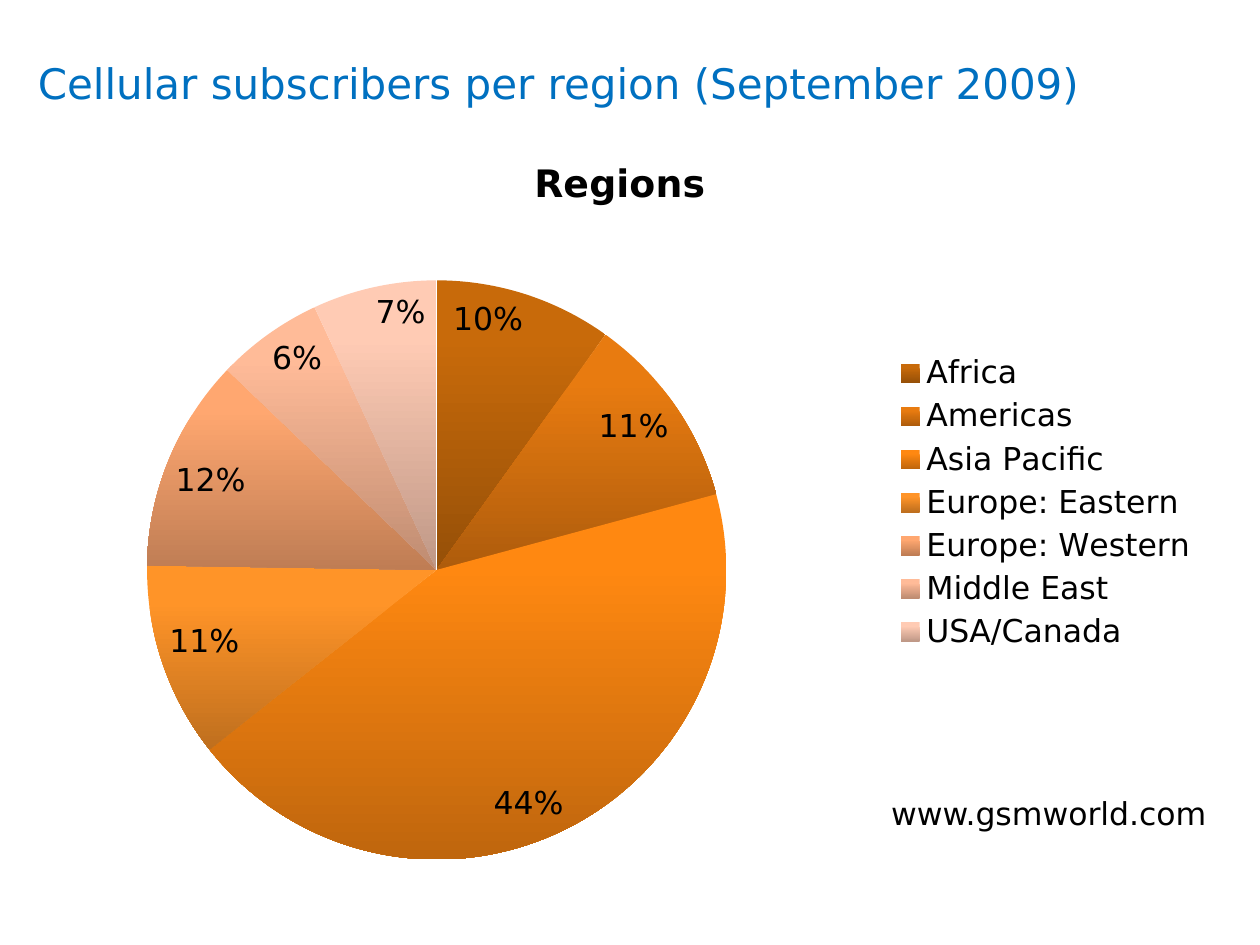
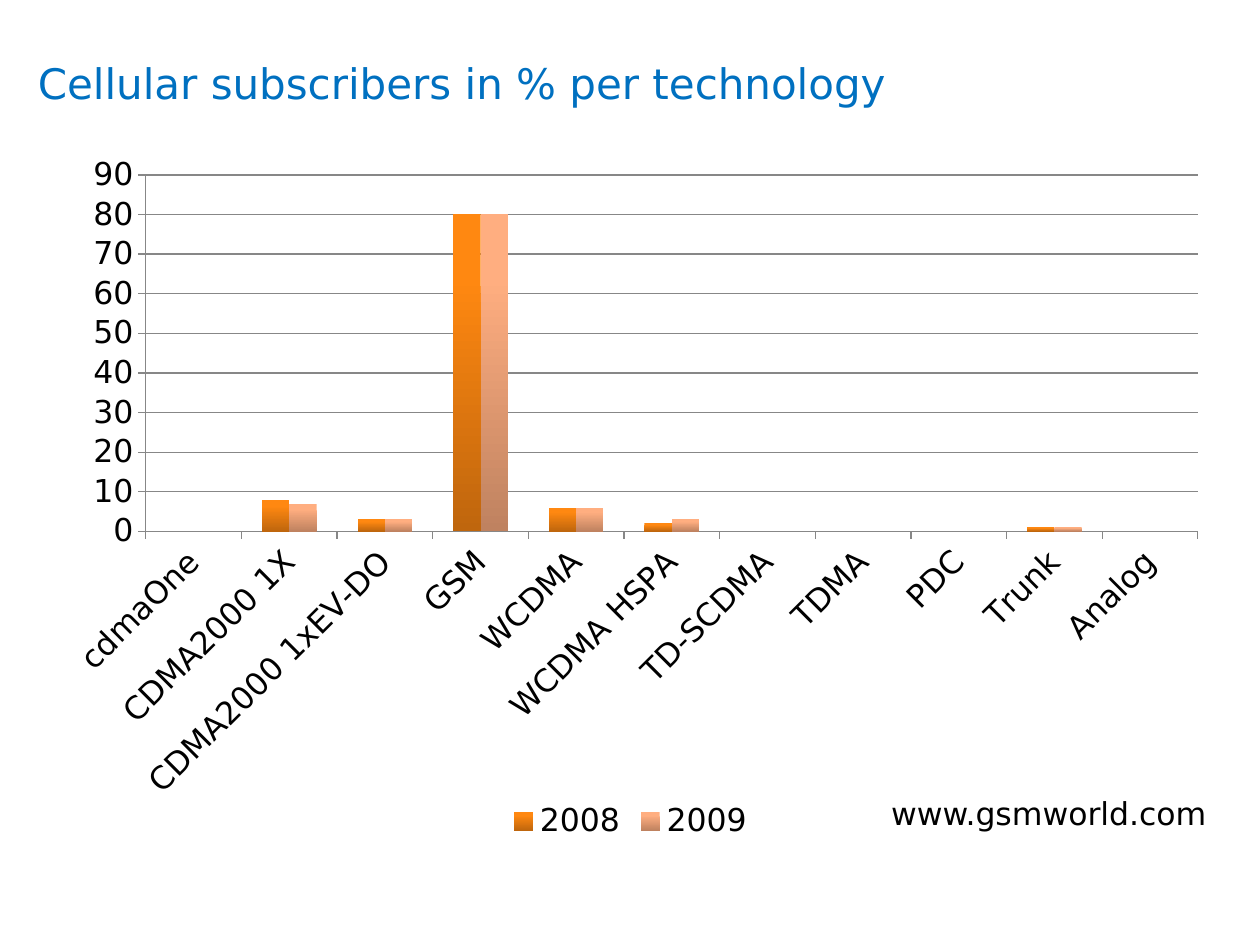
"""Two chart slides on cellular subscribers, by region and by technology."""
from dataclasses import dataclass

from lxml import etree
from pptx import Presentation
from pptx import util as u
from pptx.chart import data as chart_data
from pptx.dml.color import RGBColor
from pptx.enum import chart as ce
from pptx.enum import text
from pptx.oxml import ns


@dataclass(frozen=True)
class Theme:
    font: str = "DejaVu Sans"
    title: RGBColor = RGBColor.from_string("0070C0")
    ink: RGBColor = RGBColor.from_string("000000")
    axis: RGBColor = RGBColor.from_string("878787")
    title_size: float = 24
    chart_title_size: float = 21.6
    body_size: float = 18
    slices: tuple = ("C86A0A", "E87B10", "FF8811", "FF9428", "FFA770", "FFBB98", "FFCBB4")
    bars: tuple = ("FF8811", "FFAE80")


theme = Theme()


def set_font(font, size, color, bold=False):
    font.name = theme.font
    font.size = u.Pt(size)
    font.color.rgb = color
    font.bold = bold


def shade_down(fill, top):
    fill.gradient()
    fill.gradient_angle = 270
    top_color = RGBColor.from_string(top)
    first, last = fill.gradient_stops
    first.color.rgb = top_color
    first.position = 0.2
    last.color.rgb = RGBColor(*(round(channel * 0.75) for channel in top_color))


regions = {
    "Africa": 10, "Americas": 11, "Asia Pacific": 44, "Europe: Eastern": 11,
    "Europe: Western": 12, "Middle East": 6, "USA/Canada": 7,
}
technologies = {
    "cdmaOne": (0, 0), "CDMA2000 1X": (8, 7), "CDMA2000 1xEV-DO": (3, 3),
    "GSM": (80, 80), "WCDMA": (6, 6), "WCDMA HSPA": (2, 3), "TD-SCDMA": (0, 0),
    "TDMA": (0, 0), "PDC": (0, 0), "Trunk": (1, 1), "Analog": (0, 0),
}
by_year = dict(zip(("2008", "2009"), zip(*technologies.values())))

pages = [
    ("Cellular subscribers per region (September 2009)", 705.6,
     ce.XL_CHART_TYPE.PIE, (16.5, 73.5, 675.5, 427.5), (0.1, 0.2, 0.49, 0.78),
     ce.XL_LEGEND_POSITION.RIGHT, regions, {"Regions": regions.values()}),
    ("Cellular subscribers in % per technology", 658,
     ce.XL_CHART_TYPE.COLUMN_CLUSTERED, (22.5, 84, 675.5, 399.5), (0.09, 0.04, 0.89, 0.51),
     ce.XL_LEGEND_POSITION.BOTTOM, technologies, by_year),
]

presentation = Presentation()
presentation.slide_width, presentation.slide_height = u.Pt(720), u.Pt(540)
charts = []

for heading, title_width, kind, box, plot_box, legend_side, categories, series_values in pages:
    slide = presentation.slides.add_slide(presentation.slide_layouts[5])
    title = slide.shapes.title
    title.left, title.top = u.Pt(14.4), u.Pt(0)
    title.width, title.height = u.Pt(title_width), u.Pt(65.5)
    title.text_frame.vertical_anchor = text.MSO_ANCHOR.BOTTOM
    title.text_frame.auto_size = text.MSO_AUTO_SIZE.NONE
    paragraph = title.text_frame.paragraphs[0]
    paragraph.alignment = text.PP_ALIGN.LEFT
    run = paragraph.add_run()
    run.text = heading
    set_font(run.font, theme.title_size, theme.title)

    values = chart_data.CategoryChartData()
    values.categories = list(categories)
    for name, numbers in series_values.items():
        values.add_series(name, list(numbers))
    chart = slide.shapes.add_chart(kind, *(u.Pt(side) for side in box), values).chart
    set_font(chart.font, theme.body_size, theme.ink)
    chart.has_title = False
    chart.has_legend = True
    chart.legend.position = legend_side
    chart.legend.include_in_layout = False
    charts.append(chart)

    plot_area = chart.element.find(".//" + ns.qn("c:plotArea"))
    for old_layout in plot_area.findall(ns.qn("c:layout")):
        plot_area.remove(old_layout)
    layout = etree.Element(ns.qn("c:layout"))
    manual = etree.SubElement(layout, ns.qn("c:manualLayout"))
    settings = [("layoutTarget", "inner"), ("xMode", "edge"), ("yMode", "edge")]
    for tag, value in settings + list(zip("xywh", plot_box)):
        etree.SubElement(manual, ns.qn("c:" + tag)).set("val", str(value))
    plot_area.insert(0, layout)

    source_box = slide.shapes.add_textbox(u.Pt(500.4), u.Pt(450), u.Pt(198), u.Pt(29))
    source_box.text_frame.word_wrap = False
    source_box.text_frame.auto_size = text.MSO_AUTO_SIZE.SHAPE_TO_FIT_TEXT
    paragraph = source_box.text_frame.paragraphs[0]
    paragraph.alignment = text.PP_ALIGN.CENTER
    run = paragraph.add_run()
    run.text = "www.gsmworld.com"
    set_font(run.font, theme.body_size, theme.ink)

region_chart, technology_chart = charts

region_chart.has_title = True
run = region_chart.chart_title.text_frame.paragraphs[0].add_run()
run.text = "Regions"
set_font(run.font, theme.chart_title_size, theme.ink, bold=True)
pie = region_chart.plots[0]
pie.vary_by_categories = True
for index, color in enumerate(theme.slices):
    shade_down(pie.series[0].points[index].format.fill, color)
pie.has_data_labels = True
labels = pie.data_labels
labels.show_percentage = True
labels.show_value = False
labels.number_format = "0%"
labels.number_format_is_linked = False
labels.position = ce.XL_LABEL_POSITION.INSIDE_END
set_font(labels.font, theme.body_size, theme.ink)

columns = technology_chart.plots[0]
columns.vary_by_categories = False
columns.gap_width = 150
columns.overlap = 0
for series, color in zip(columns.series, theme.bars):
    shade_down(series.format.fill, color)

value_axis = technology_chart.value_axis
value_axis.minimum_scale, value_axis.maximum_scale, value_axis.major_unit = 0, 90, 10
value_axis.has_major_gridlines = True
category_axis = technology_chart.category_axis
for axis in (value_axis, category_axis):
    axis.major_tick_mark = ce.XL_TICK_MARK.OUTSIDE
    set_font(axis.tick_labels.font, theme.body_size, theme.ink)
for lines in (value_axis, category_axis, value_axis.major_gridlines):
    lines.format.line.color.rgb = theme.axis
    lines.format.line.width = u.Pt(0.75)
label_body = technology_chart.element.xpath(".//c:catAx/c:txPr/a:bodyPr")[0]
label_body.set("rot", str(-45 * 60000))
label_body.set("vert", "horz")

presentation.save("out.pptx")
